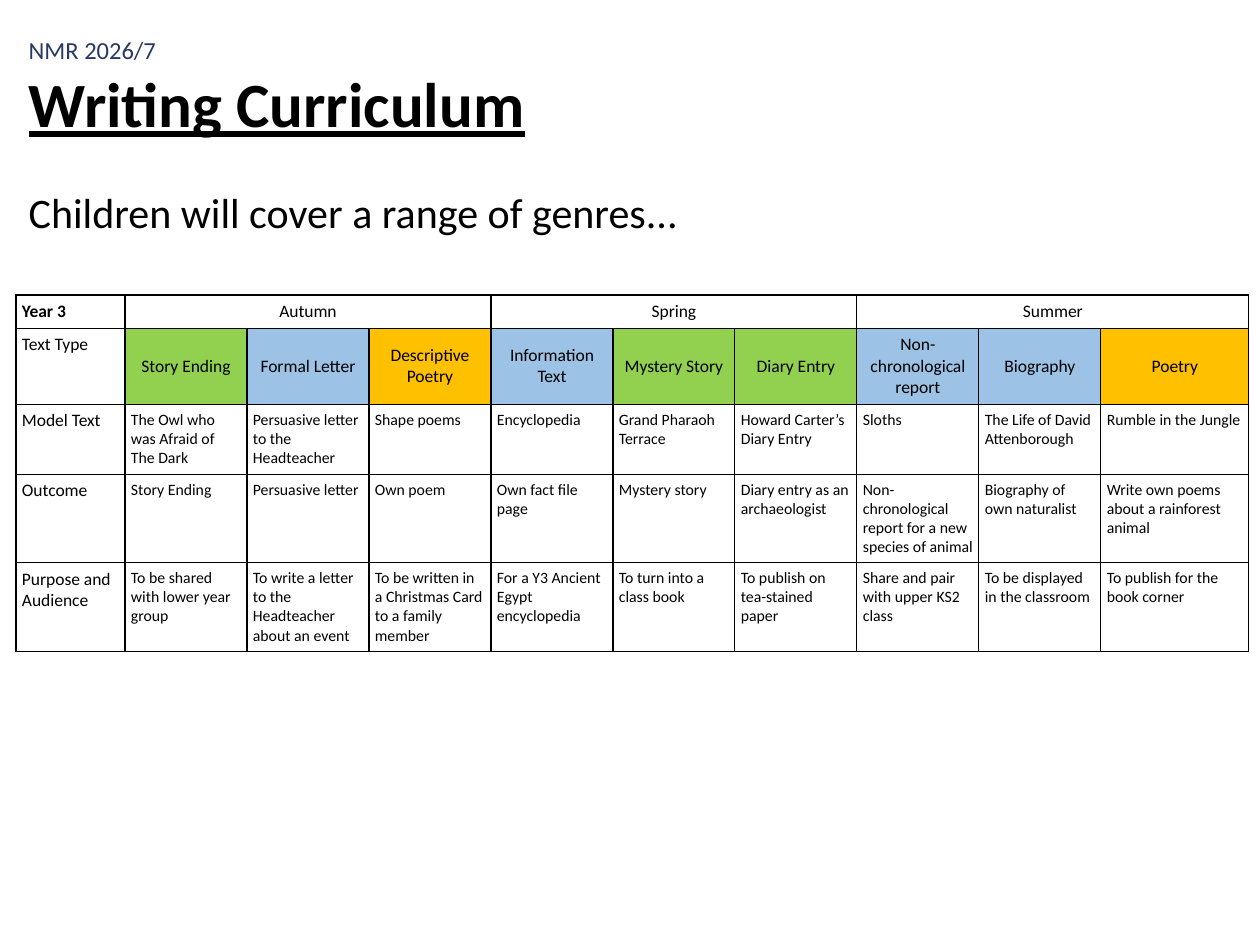
import pptx
import pptx.util
import pptx.dml.color
import pptx.enum.text
import lxml.etree

Emu, Pt = pptx.util.Emu, pptx.util.Pt
ALIGN, ANCHOR = pptx.enum.text.PP_ALIGN, pptx.enum.text.MSO_ANCHOR
PX = 914400 / 126
NS = "http://schemas.openxmlformats.org/drawingml/2006/main"
BORDER = (f'<a:{{0}} xmlns:a="{NS}" w="9780"><a:solidFill><a:srgbClr val="000000"/>'
          '</a:solidFill></a:{0}>')
GREEN, BLUE, GOLD, WHITE = "92D050", "9CC2E5", "FFC000", "FFFFFF"


def px(n):
    return Emu(round(n * PX))


def style(para, size, color="000000", bold=False, align=ALIGN.LEFT):
    font = para.font
    font.name, font.size, font.bold = "Calibri", Pt(size), bold
    font.color.rgb = pptx.dml.color.RGBColor.from_string(color)
    para.alignment = align
    para.space_before = Pt(0)


prs = pptx.Presentation()
prs.slide_width, prs.slide_height = px(1260), px(945)
slide = prs.slides.add_slide(prs.slide_layouts[1])

# Heading and lead line
title, lead = slide.placeholders
for box, place in ((title, (16, 29, 688, 158)), (lead, (16, 180, 1183, 115))):
    box.left, box.top, box.width, box.height = map(px, place)
    box.text_frame.vertical_anchor = ANCHOR.TOP
    box.text_frame.auto_size = pptx.enum.text.MSO_AUTO_SIZE.NONE

title.text_frame.text = "NMR 2026/7\nWriting Curriculum"
school, head = title.text_frame.paragraphs
style(school, 14, "273A64")
style(head, 36, bold=True)
head.font.underline = True

lead.text_frame.text = "Children will cover a range of genres..."
line = lead.text_frame.paragraphs[0]
props = line._p.get_or_add_pPr()
props.set("marL", "0")
props.set("indent", "0")
lxml.etree.SubElement(props, f"{{{NS}}}buNone")
style(line, 24)

# Curriculum table
rows = [
    ["Year 3", "Autumn", "", "", "Spring", "", "", "Summer", "", ""],
    ["Text Type", "Story Ending", "Formal Letter", "Descriptive\nPoetry",
     "Information\nText", "Mystery Story", "Diary Entry",
     "Non- chronological report", "Biography", "Poetry"],
    ["Model Text", "The Owl who was Afraid of The Dark",
     "Persuasive letter to the Headteacher", "Shape poems", "Encyclopedia",
     "Grand Pharaoh Terrace", "Howard Carter’s Diary Entry", "Sloths",
     "The Life of David Attenborough", "Rumble in the Jungle"],
    ["Outcome", "Story Ending", "Persuasive letter", "Own poem",
     "Own fact file page", "Mystery story ", "Diary entry as an archaeologist",
     "Non-chronological report for a new species of animal",
     "Biography of own naturalist", "Write own poems about a rainforest animal"],
    ["Purpose and Audience", "To be shared with lower year group",
     "To write a letter to the Headteacher about an event",
     "To be written in a Christmas Card to a family member",
     "For a Y3 Ancient Egypt encyclopedia", "To turn into a class book",
     "To publish on tea-stained paper", "Share and pair with upper KS2 class",
     "To be displayed in the classroom", "To publish for the book corner"],
]
kinds = [GREEN, BLUE, GOLD, BLUE, GREEN, GREEN, BLUE, BLUE, GOLD]
wide = [109] + [122] * 8 + [148]
high = [33, 76, 70, 88, 88]

table = slide.shapes.add_table(len(high), len(wide), px(16), px(295),
                               px(sum(wide)), px(sum(high))).table
table.first_row = table.horz_banding = False
for col, size in zip(table.columns, wide):
    col.width = px(size)
for row, size in zip(table.rows, high):
    row.height = px(size)

for r, texts in enumerate(rows):
    for c, text in enumerate(texts):
        cell = table.cell(r, c)
        cell.text = text
        cell.margin_left = cell.margin_right = px(6)
        cell.margin_top = cell.margin_bottom = px(6)
        for side in ("lnL", "lnR", "lnT", "lnB"):
            cell._tc.get_or_add_tcPr().append(
                lxml.etree.fromstring(BORDER.format(side)))
        if c == 0 or r == 0:
            cell.fill.background()
        else:
            cell.fill.solid()
            color = kinds[c - 1] if r == 1 else WHITE
            cell.fill.fore_color.rgb = pptx.dml.color.RGBColor.from_string(color)
        label = c > 0 and r < 2
        if label and (r == 1 or c == 7):
            cell.vertical_anchor = ANCHOR.MIDDLE
        for para in cell.text_frame.paragraphs:
            style(para, 10 if c == 0 or r < 2 else 9, bold=r == c == 0,
                  align=ALIGN.CENTER if label else ALIGN.LEFT)

for first in (1, 4, 7):
    table.cell(0, first).merge(table.cell(0, first + 2))

prs.save("out.pptx")
